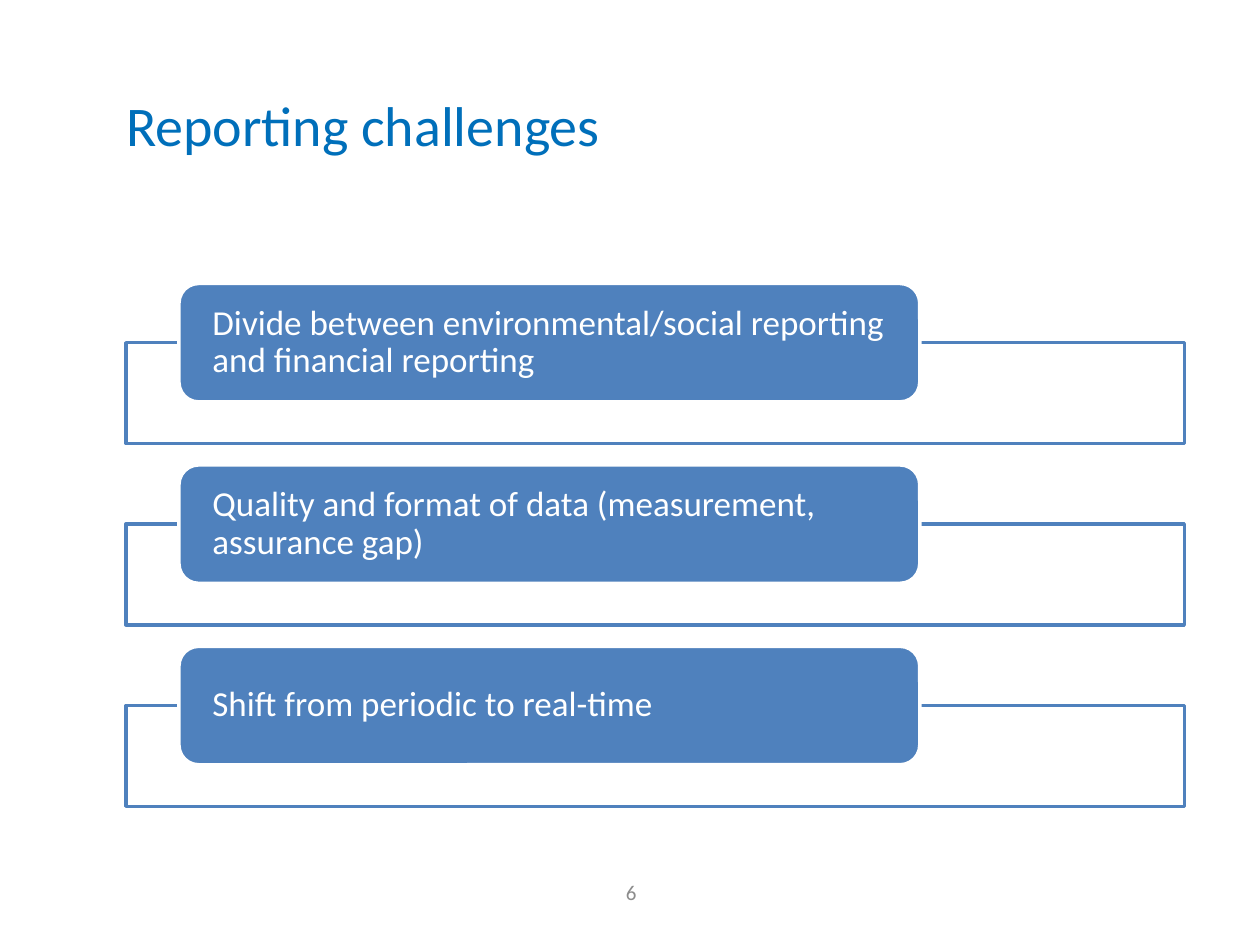
from lxml import etree
from pptx import Presentation
from pptx import util as u
from pptx.dml.color import RGBColor
from pptx.enum import shapes, text
from pptx.oxml.ns import qn

WIDTH, HEIGHT = 10, 7.5
LEFT, CONTENT_WIDTH = 0.1 * WIDTH, 0.84 * WIDTH
FIRST_ROW, ROW_PITCH = 0.3 * HEIGHT, 1.44
BLUE, WHITE = "4F81BD", "FFFFFF"
CHALLENGES = [
    "Divide between environmental/social reporting and financial reporting",
    "Quality and format of data (measurement, assurance gap)",
    "Shift from periodic to real-time",
]


def color(value):
    return RGBColor.from_string(value)


def write(shape, words, size, ink, align=text.PP_ALIGN.LEFT, side=0, edge=0):
    frame = shape.text_frame
    frame.text = words
    frame.word_wrap = True
    frame.auto_size = text.MSO_AUTO_SIZE.NONE
    frame.vertical_anchor = text.MSO_ANCHOR.MIDDLE
    frame.margin_left = frame.margin_right = u.Inches(side)
    frame.margin_top = frame.margin_bottom = u.Inches(edge)
    para = frame.paragraphs[0]
    para.alignment = align
    for span in para.runs:
        span.font.name = "Calibri"
        span.font.size = u.Pt(size)
        span.font.color.rgb = color(ink)
    return para


def add_panel(page, kind, left, top, width, height, fill, line):
    panel = page.shapes.add_shape(kind, *map(u.Inches, (left, top, width, height)))
    panel.shadow.inherit = False
    panel.fill.solid()
    panel.fill.fore_color.rgb = color(fill)
    panel.line.color.rgb = color(line)
    panel.line.width = u.Pt(2)
    return panel


def add_challenge(page, row, words):
    top = FIRST_ROW + row * ROW_PITCH
    frame = add_panel(page, shapes.MSO_SHAPE.RECTANGLE,
                      LEFT, top + 0.47, CONTENT_WIDTH, 0.8, WHITE, BLUE)
    fill = frame.fill.fore_color._xFill.find(qn("a:srgbClr"))
    etree.SubElement(fill, qn("a:alpha")).set("val", "90000")
    label = add_panel(page, shapes.MSO_SHAPE.ROUNDED_RECTANGLE,
                      LEFT + 0.05 * CONTENT_WIDTH, top,
                      0.7 * CONTENT_WIDTH, 0.94, BLUE, WHITE)
    para = write(label, words, 20, WHITE, side=0.22)
    para.line_spacing = 0.9


def place_title(page, words):
    title = page.shapes.title
    title.left, title.top = u.Inches(LEFT), u.Inches(0.69)
    title.width, title.height = u.Inches(CONTENT_WIDTH), u.Inches(0.59)
    write(title, words, 32, "006FBA")


def add_page_number(page, number):
    box = page.shapes.add_textbox(*map(u.Inches, (3.97, 6.88, 1.18, 0.4)))
    write(box, number, 12, "8C8C8C", text.PP_ALIGN.RIGHT, side=0.1, edge=0.05)


def main():
    deck = Presentation()
    deck.slide_width, deck.slide_height = u.Inches(WIDTH), u.Inches(HEIGHT)
    page = deck.slides.add_slide(deck.slide_layouts[5])
    for row, words in enumerate(CHALLENGES):
        add_challenge(page, row, words)
    place_title(page, "Reporting challenges")
    add_page_number(page, "6")
    deck.save("out.pptx")


if __name__ == "__main__":
    main()
